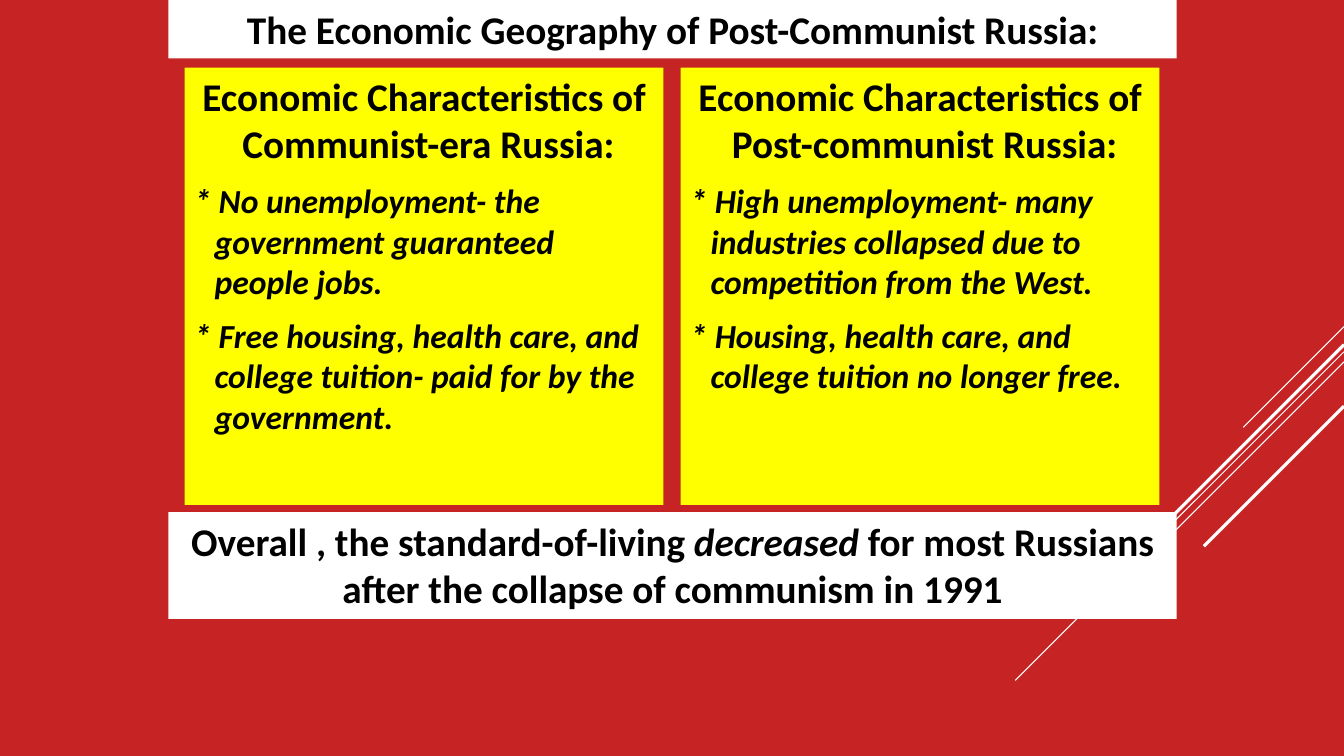
from pptx import Presentation
from pptx.dml.color import RGBColor
from pptx.enum.shapes import MSO_CONNECTOR, MSO_SHAPE
from pptx.enum.text import MSO_ANCHOR, PP_ALIGN
from pptx.oxml.ns import qn
from pptx.util import Inches, Pt
from lxml.etree import SubElement

RED = RGBColor(0xC6, 0x23, 0x24)
YELLOW = RGBColor(0xFF, 0xFF, 0x00)
WHITE = RGBColor(0xFF, 0xFF, 0xFF)
BLACK = RGBColor(0x00, 0x00, 0x00)

HEADING = {"size": Pt(28)}
POINT = {"size": Pt(24), "italic": True}
CENTERED = {"alignment": PP_ALIGN.CENTER}
SPACED = {"alignment": PP_ALIGN.LEFT, "space_before": Pt(9.8)}
HANGING = Inches(0.2)

SLIDE_WIDTH, SLIDE_HEIGHT = 13.33, 7.5
BANNER_LEFT, BANNER_WIDTH = 1.67, 10
COLUMN_LEFT, COLUMN_TOP = 1.83, 0.67
COLUMN_WIDTH, COLUMN_HEIGHT, COLUMN_STEP = 4.75, 4.34, 4.92

# Height at the right edge, run of the 45-degree line, line width
DIAGONALS = [
    (3.24, 1.00, 0.75),
    (3.49, 3.26, 0.75),
    (3.59, 2.07, 0.75),
    (3.42, 1.91, 2.25),
    (4.03, 1.39, 2.25),
]

COLUMNS = [
    (
        ["Economic Characteristics of", " Communist-era Russia:"],
        [
            "* No unemployment- the\vgovernment guaranteed\vpeople jobs.",
            "* Free housing, health care, and\vcollege tuition- paid for by the\vgovernment.",
        ],
    ),
    (
        ["Economic Characteristics of", " Post-communist Russia:"],
        [
            "* High unemployment- many\vindustries collapsed due to\vcompetition from the West.",
            "* Housing, health care, and\vcollege tuition no longer free.",
        ],
    ),
]


def apply_format(target, values):
    for name, value in values.items():
        setattr(target, name, value)


class SlideBuilder:
    font = {"name": "Calibri", "bold": True}

    def __init__(self, page):
        self.page = page

    def background(self, color):
        fill = self.page.background.fill
        fill.solid()
        fill.fore_color.rgb = color

    def diagonal(self, top, run, width):
        """Draw a 45-degree line down and left from the slide's right edge."""
        line = self.page.shapes.add_connector(
            MSO_CONNECTOR.STRAIGHT,
            Inches(SLIDE_WIDTH), Inches(top),
            Inches(SLIDE_WIDTH - run), Inches(top + run),
        )
        line.line.color.rgb = WHITE
        line.line.width = Pt(width)
        SubElement(line._element.spPr, qn("a:effectLst"))

    def panel(self, left, top, width, height, color):
        """Add a filled rectangle and return its text frame."""
        box = self.page.shapes.add_shape(
            MSO_SHAPE.RECTANGLE,
            Inches(left), Inches(top), Inches(width), Inches(height),
        )
        box.shadow.inherit = False
        box.fill.solid()
        box.fill.fore_color.rgb = color
        box.line.fill.background()
        apply_format(box.text_frame, {"word_wrap": True, "vertical_anchor": MSO_ANCHOR.TOP})
        return box.text_frame

    def paragraph(self, frame, spans, layout, hanging=False):
        """Write (text, format) spans into the empty first or a new paragraph."""
        first = frame.paragraphs[0]
        para = frame.add_paragraph() if first.text else first
        apply_format(para, layout)
        if hanging:
            properties = para._p.get_or_add_pPr()
            properties.set("marL", str(HANGING))
            properties.set("indent", str(-HANGING))
        for text, style in spans:
            for number, piece in enumerate(text.split("\v")):
                if number:
                    para.add_line_break()
                span = para.add_run()
                span.text = piece
                apply_format(span.font, {**self.font, **style})
                span.font.color.rgb = BLACK

    def banner(self, top, height, spans):
        frame = self.panel(BANNER_LEFT, top, BANNER_WIDTH, height, WHITE)
        self.paragraph(frame, spans, CENTERED)

    def column(self, left, headings, points):
        frame = self.panel(left, COLUMN_TOP, COLUMN_WIDTH, COLUMN_HEIGHT, YELLOW)
        for heading in headings:
            self.paragraph(frame, [(heading, HEADING)], CENTERED)
        for point in points:
            self.paragraph(frame, [(point, POINT)], SPACED, hanging=True)


def main():
    deck = Presentation()
    deck.slide_width = Inches(SLIDE_WIDTH)
    deck.slide_height = Inches(SLIDE_HEIGHT)
    builder = SlideBuilder(deck.slides.add_slide(deck.slide_layouts[6]))

    builder.background(RED)
    for diagonal in DIAGONALS:
        builder.diagonal(*diagonal)
    builder.banner(0, 0.58, [("The Economic Geography of Post-Communist Russia:", HEADING)])
    for index, (headings, points) in enumerate(COLUMNS):
        builder.column(COLUMN_LEFT + index * COLUMN_STEP, headings, points)
    builder.banner(5.08, 1.06, [
        ("Overall , the standard-of-living ", HEADING),
        ("decreased", {**HEADING, "italic": True}),
        (" for most Russians after the collapse of communism in 1991", HEADING),
    ])
    deck.save("out.pptx")


if __name__ == "__main__":
    main()
